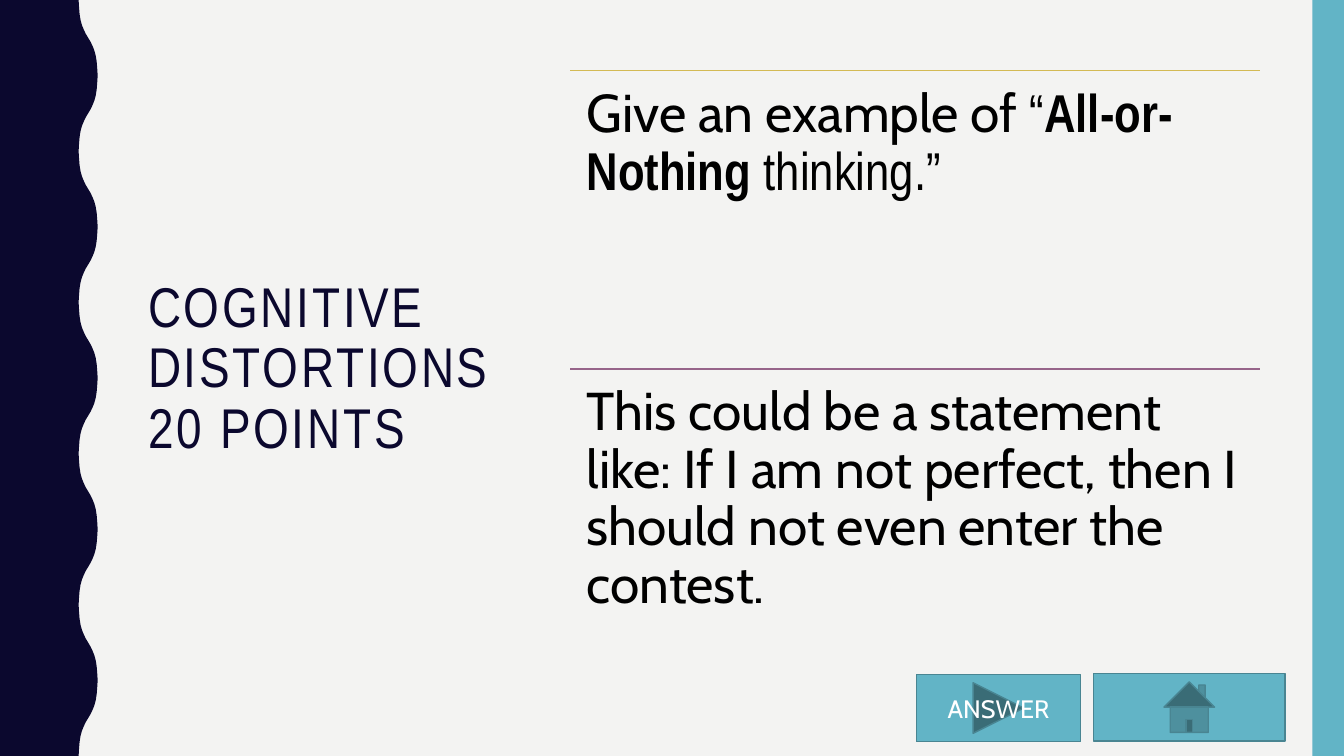
from lxml import etree
from pptx import Presentation
from pptx.dml.color import RGBColor
from pptx.enum import shapes, text
from pptx.oxml import ns
from pptx.util import Pt

THEME = {
    "background": "F3F3F2", "navy": "0B082E", "teal": "62B4C6", "teal_line": "498592",
    "gold": "D3BA55", "plum": "96648A", "black": "000000", "white": "FFFFFF",
    "heading_font": "Arial Narrow", "body_font": "Cabin",
    "title_size": 40, "body_size": 38, "button_size": 18,
}

SLIDE_WIDTH, SLIDE_HEIGHT = 960, 540
TITLE_LINES = ["COGNITIVE DISTORTIONS", "20 POINTS"]
TITLE_BOX = (98.6, 51.1, 266.4, 425.5)

PANELS = [
    ("gold", [
        ("Give an example of ", "body_font", False),
        ("“", "heading_font", False),
        ("All-or- Nothing ", "heading_font", True),
        ("thinking.”", "heading_font", False),
    ]),
    ("plum", [
        ("This could be a statement like: If I am not perfect, "
         "then I should not even enter the contest.", "body_font", False),
    ]),
]
PANEL_LEFT, PANEL_TOP, PANEL_WIDTH, PANEL_HEIGHT = 407.5, 50.5, 492.5, 213
PANEL_INSET = 11.5

BUTTONS = [
    (shapes.MSO_SHAPE.ACTION_BUTTON_HOME, (781, 481, 137, 48.2), ""),
    (shapes.MSO_SHAPE.ACTION_BUTTON_FORWARD_OR_NEXT, (654.5, 481.7, 117.4, 48.2), "ANSWER"),
]
SIDE_BAR = (937.5, 0, 22.5, SLIDE_HEIGHT)

WAVE_PERIOD, WAVE_COUNT, WAVE_MIDDLE = 108, 5, 63
WAVE_QUARTER = [(56.2, 0), (56.5, 5), (56.9, 10), (57.6, 14.4),
                (58.6, 18), (59.8, 21), (61.2, 24), (WAVE_MIDDLE, 27)]


def color(name):
    return RGBColor.from_string(THEME[name])


def points(values):
    return [Pt(value) for value in values]


def paint(shape, fill, line=None):
    shape.shadow.inherit = False
    shape.fill.solid()
    shape.fill.fore_color.rgb = color(fill)
    if line:
        shape.line.color.rgb = color(line)
        shape.line.width = Pt(1)
    else:
        shape.line.fill.background()


def add_run(paragraph, words, font, size, ink, bold=False):
    run = paragraph.add_run()
    run.text = words
    run.font.name = THEME[font]
    run.font.size = Pt(THEME[size])
    run.font.color.rgb = color(ink)
    run.font.bold = bold
    return run


def add_wave(slide):
    half = WAVE_QUARTER + [(2 * WAVE_MIDDLE - x, WAVE_PERIOD / 2 - y)
                           for x, y in WAVE_QUARTER[-2::-1]]
    period = half + [(x, WAVE_PERIOD - y) for x, y in half[-2::-1]]
    edge = [(x, y + index * WAVE_PERIOD) for index in range(WAVE_COUNT) for x, y in period]
    builder = slide.shapes.build_freeform(0, 0)
    builder.add_line_segments([points(corner) for corner in edge + [(0, SLIDE_HEIGHT)]])
    paint(builder.convert_to_shape(), "navy")


def add_title(slide):
    title = slide.shapes.title
    title.left, title.top, title.width, title.height = points(TITLE_BOX)
    frame = title.text_frame
    frame.word_wrap = True
    frame.auto_size = text.MSO_AUTO_SIZE.NONE
    frame.vertical_anchor = text.MSO_ANCHOR.MIDDLE
    paragraph = frame.paragraphs[0]
    paragraph.alignment = text.PP_ALIGN.LEFT
    paragraph.line_spacing = 0.9
    for index, line in enumerate(TITLE_LINES):
        if index:
            paragraph.add_line_break()
        run = add_run(paragraph, line, "heading_font", "title_size", "navy")
        run._r.get_or_add_rPr().set("spc", "200")


def add_panel(slide, top, rule_color, runs):
    rule = slide.shapes.add_connector(
        shapes.MSO_CONNECTOR.STRAIGHT,
        *points((PANEL_LEFT, top, PANEL_LEFT + PANEL_WIDTH, top)))
    rule.line.color.rgb = color(rule_color)
    rule.line.width = Pt(1)
    etree.SubElement(rule._element.spPr, ns.qn("a:effectLst"))
    box = slide.shapes.add_textbox(*points((PANEL_LEFT, top, PANEL_WIDTH, PANEL_HEIGHT)))
    frame = box.text_frame
    frame.word_wrap = True
    frame.margin_left = frame.margin_right = Pt(PANEL_INSET)
    frame.margin_top = frame.margin_bottom = Pt(PANEL_INSET)
    paragraph = frame.paragraphs[0]
    paragraph.line_spacing = 0.9
    for words, font, bold in runs:
        add_run(paragraph, words, font, "body_size", "black", bold)


def add_button(slide, kind, box, label):
    button = slide.shapes.add_shape(kind, *points(box))
    paint(button, "teal", "teal_line")
    if label:
        button.text_frame.vertical_anchor = text.MSO_ANCHOR.MIDDLE
        paragraph = button.text_frame.paragraphs[0]
        paragraph.alignment = text.PP_ALIGN.CENTER
        add_run(paragraph, label, "body_font", "button_size", "white")


def main():
    presentation = Presentation()
    presentation.slide_width, presentation.slide_height = Pt(SLIDE_WIDTH), Pt(SLIDE_HEIGHT)
    slide = presentation.slides.add_slide(presentation.slide_layouts.get_by_name("Title Only"))
    slide.background.fill.solid()
    slide.background.fill.fore_color.rgb = color("background")
    add_wave(slide)
    paint(slide.shapes.add_shape(shapes.MSO_SHAPE.RECTANGLE, *points(SIDE_BAR)), "teal")
    for kind, box, label in BUTTONS:
        add_button(slide, kind, box, label)
    add_title(slide)
    for index, (rule_color, runs) in enumerate(PANELS):
        add_panel(slide, PANEL_TOP + index * PANEL_HEIGHT, rule_color, runs)
    presentation.save("out.pptx")


if __name__ == "__main__":
    main()
